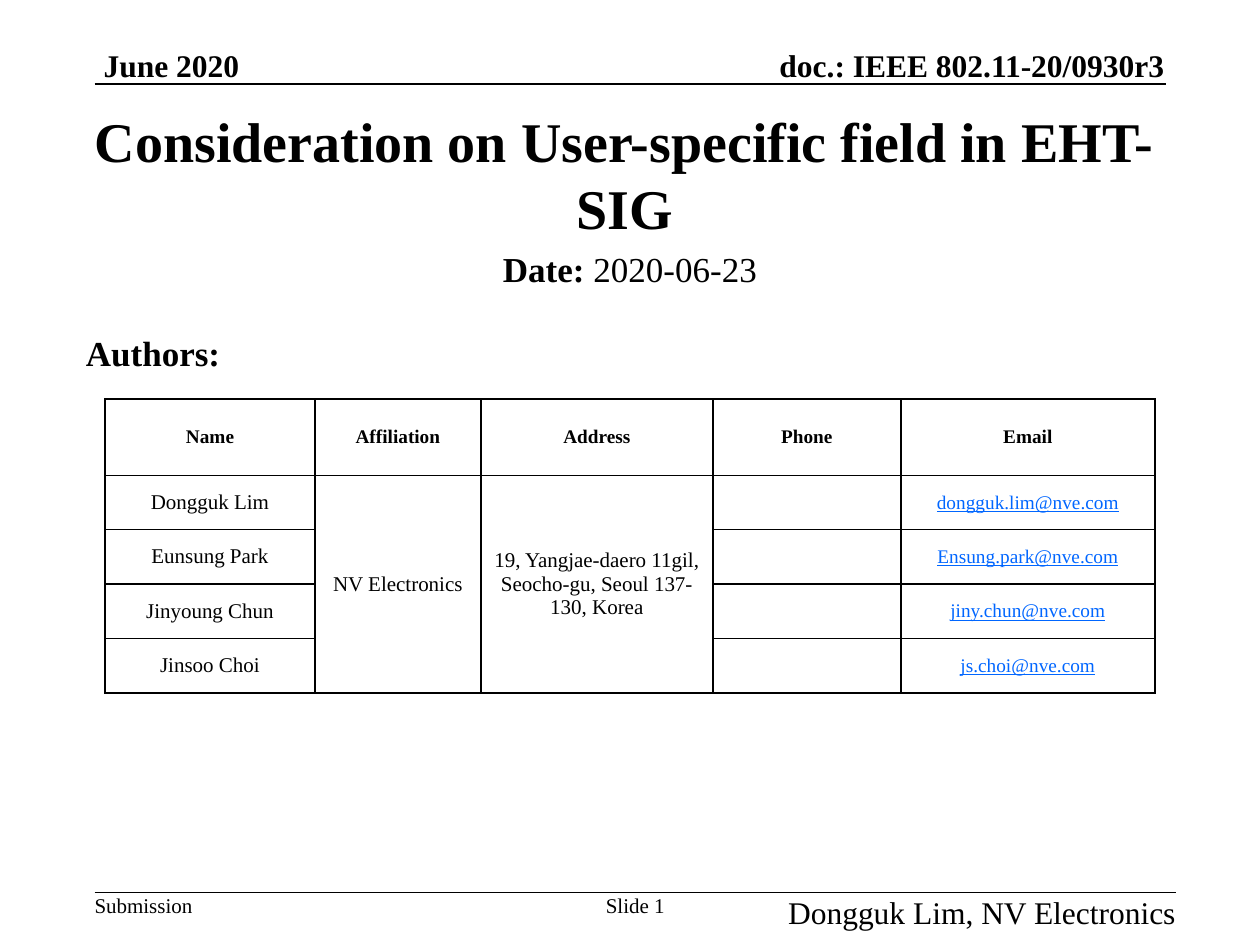
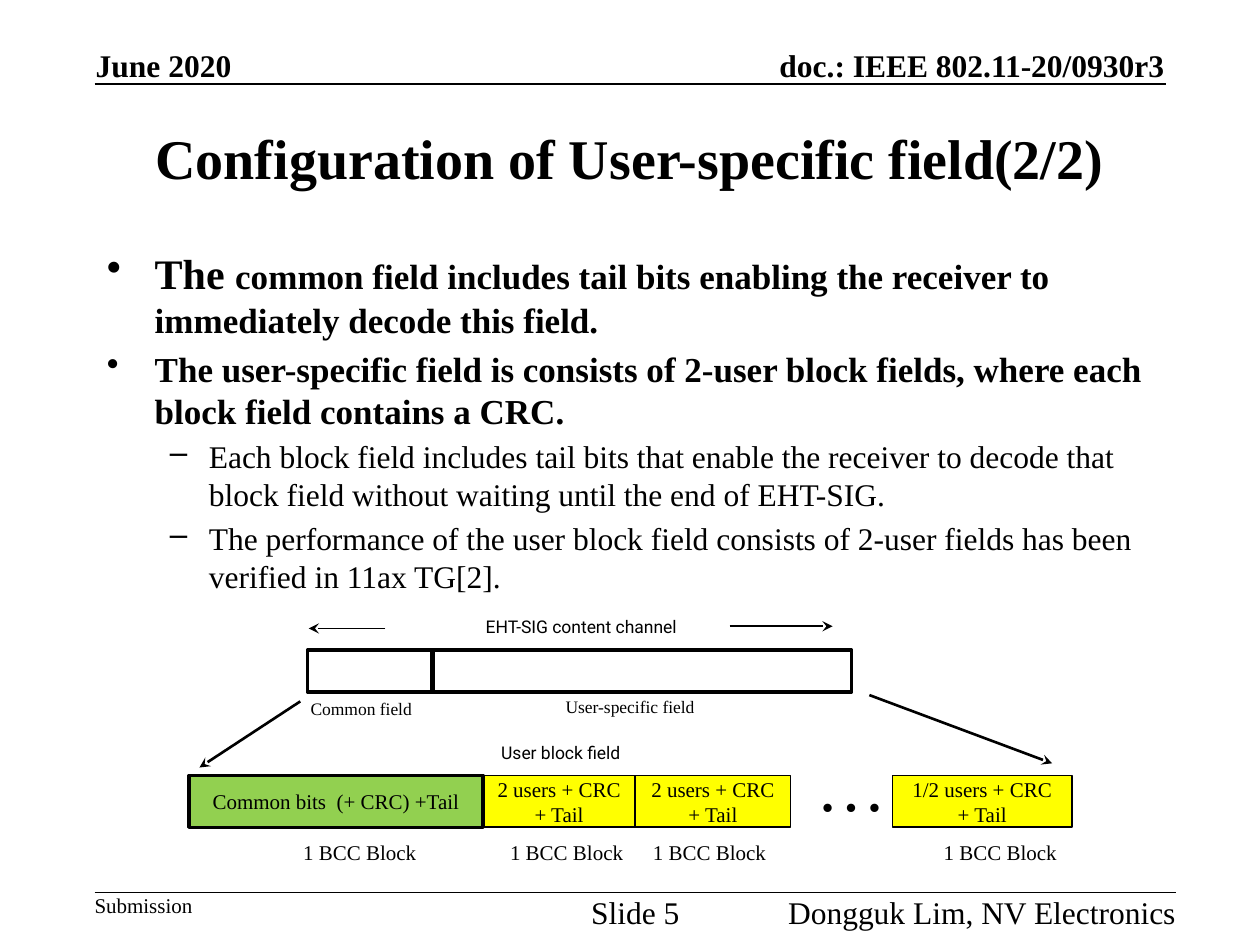
"""Build two slides on the user-specific field of EHT-SIG."""
from collections import namedtuple

from pptx import Presentation
from pptx import util as u
from pptx.dml.color import RGBColor
from pptx.enum import shapes, text
from pptx.oxml import parse_xml
from pptx.oxml.ns import nsdecls

BLACK = RGBColor(0x00, 0x00, 0x00)
LINK = RGBColor(0x00, 0x66, 0xFF)
YELLOW = RGBColor(0xFF, 0xFF, 0x00)
GREEN = RGBColor(0x92, 0xD0, 0x50)
SERIF, SANS = "Times New Roman", "Roboto"
LEFT, CENTER, RIGHT = text.PP_ALIGN.LEFT, text.PP_ALIGN.CENTER, text.PP_ALIGN.RIGHT
TOP, MIDDLE, BOTTOM = text.MSO_ANCHOR.TOP, text.MSO_ANCHOR.MIDDLE, text.MSO_ANCHOR.BOTTOM

WIDTH, HEIGHT = u.Inches(10), u.Inches(7.5)
COLUMNS, ROWS = 120, 90
TEXT_INSETS = (0.1, 0.05)
COMPANY = "NV Electronics"
HEADERS = ("Name", "Affiliation", "Address", "Phone", "Email")
ADDRESS = "19, Yangjae-daero 11gil, Seocho-gu, Seoul 137-130, Korea"
AUTHORS = (
    ("Dongguk Lim", "dongguk.lim@nve.com"),
    ("Eunsung Park", "Ensung.park@nve.com"),
    ("Jinyoung Chun", "jiny.chun@nve.com"),
    ("Jinsoo Choi", "js.choi@nve.com"),
)

Box = namedtuple("Box", "left top width height")


def column(count):
    """Return the length of some grid columns."""
    return int(WIDTH * count / COLUMNS)


def row(count):
    """Return the length of some grid rows."""
    return int(HEIGHT * count / ROWS)


def measure(box):
    """Turn a box in grid units into slide lengths."""
    return column(box.left), row(box.top), column(box.width), row(box.height)


def inside(box, left, top, width, height):
    """Return a box placed relative to the corner of another."""
    return Box(box.left + left, box.top + top, width, height)


def add_run(paragraph, words, size, bold=False, color=BLACK, font=SERIF, underline=None):
    """Add one formatted run to a paragraph."""
    run = paragraph.add_run()
    run.text = words
    run.font.name, run.font.size = font, u.Pt(size)
    run.font.bold, run.font.underline = bold, underline
    run.font.color.rgb = color


def set_frame(frame, anchor, insets=TEXT_INSETS, wrap=True):
    """Set the anchor, insets and wrapping of a text frame."""
    frame.auto_size = text.MSO_AUTO_SIZE.NONE
    frame.word_wrap, frame.vertical_anchor = wrap, anchor
    frame.margin_left = frame.margin_right = u.Inches(insets[0])
    frame.margin_top = frame.margin_bottom = u.Inches(insets[1])


def add_text(slide, box, words, size, align=LEFT, anchor=TOP, insets=TEXT_INSETS,
             wrap=True, bold=False, font=SERIF):
    """Add a text box and return its paragraph."""
    frame = slide.shapes.add_textbox(*measure(box)).text_frame
    set_frame(frame, anchor, insets, wrap)
    paragraph = frame.paragraphs[0]
    paragraph.alignment = align
    add_run(paragraph, words, size, bold, font=font)
    return paragraph


def add_line(slide, start, end, weight=1, arrow=False):
    """Draw a straight line between two grid points, with an arrowhead at its end if asked."""
    line = slide.shapes.add_connector(
        shapes.MSO_CONNECTOR.STRAIGHT,
        column(start[0]), row(start[1]), column(end[0]), row(end[1]))
    line.line.color.rgb, line.line.width = BLACK, u.Pt(weight)
    if arrow:
        head = parse_xml(f'<a:tailEnd {nsdecls("a")} type="stealth"/>')
        line.line._get_or_add_ln().append(head)
    line._element.spPr.append(parse_xml(f'<a:effectLst {nsdecls("a")}/>'))


def add_block(slide, box, words="", fill=None, weight=1):
    """Draw an outlined rectangle with centred text."""
    shape = slide.shapes.add_shape(shapes.MSO_SHAPE.RECTANGLE, *measure(box))
    shape.shadow.inherit = False
    shape.line.color.rgb, shape.line.width = BLACK, u.Pt(weight)
    if fill is None:
        shape.fill.background()
    else:
        shape.fill.solid()
        shape.fill.fore_color.rgb = fill
    set_frame(shape.text_frame, MIDDLE)
    if words:
        paragraph = shape.text_frame.paragraphs[0]
        paragraph.alignment = CENTER
        add_run(paragraph, words, 12)


def add_title(slide, box, words):
    """Place and fill the title placeholder."""
    title = slide.shapes.title
    title.left, title.top, title.width, title.height = measure(box)
    set_frame(title.text_frame, MIDDLE)
    paragraph = title.text_frame.paragraphs[0]
    paragraph.alignment = CENTER
    add_run(paragraph, words, 32, bold=True)


def add_header(slide, box, date):
    """Draw the date, document number and rule above the content."""
    style = dict(size=18, anchor=BOTTOM, insets=(0, 0), wrap=False, bold=True)
    add_text(slide, inside(box, 0.12, 0, 14, box.height), date, **style)
    add_text(slide, inside(box, 58.8, 0, 43.1, box.height),
             "doc.: IEEE 802.11-20/0930r3", align=RIGHT, **style)
    bottom = box.top + box.height
    add_line(slide, (box.left, bottom), (box.left + box.width, bottom))


def add_footer(slide, box, number, number_size):
    """Draw the rule, status, slide number and author below the content."""
    style = dict(insets=(0, 0), wrap=False)
    add_line(slide, (box.left, box.top), (box.left + box.width, box.top))
    add_text(slide, inside(box, 0, 0, 10, box.height), "Submission", 12, **style)
    add_text(slide, inside(box, 46.5, 0, 10, box.height), f"Slide {number}",
             number_size, CENTER, **style)
    add_text(slide, inside(box, 65, 0, 38, box.height), f"Dongguk Lim, {COMPANY}",
             18, RIGHT, **style)


def add_slide(presentation, title, title_box, date, number, number_size):
    """Add a slide with the shared title, header and footer."""
    slide = presentation.slides.add_slide(presentation.slide_layouts[5])
    add_title(slide, title_box, title)
    add_header(slide, Box(9, 4.35, 102, 3.65), date)
    add_footer(slide, Box(9, 85, 103, 3), number, number_size)
    return slide


def format_cell(cell):
    """Give a cell black borders, no fill and tight insets."""
    properties = cell._tc.get_or_add_tcPr()
    for side in ("L", "R", "T", "B"):
        properties.append(parse_xml(
            f'<a:ln{side} {nsdecls("a")} w="{u.Pt(1)}"><a:solidFill>'
            f'<a:srgbClr val="{BLACK}"/></a:solidFill></a:ln{side}>'))
    cell.fill.background()
    cell.vertical_anchor = MIDDLE
    cell.margin_left = cell.margin_right = u.Inches(0.07)
    cell.margin_top = cell.margin_bottom = 0


def add_authors_table(slide, box):
    """Draw the table of authors, merging the cells they share."""
    table = slide.shapes.add_table(len(AUTHORS) + 1, len(HEADERS), *measure(box)).table
    table.first_row = table.horz_banding = False
    for table_column, share in zip(table.columns, (0.2, 0.158, 0.221, 0.179, 0.242)):
        table_column.width = column(box.width * share)
    header_share = 0.26
    for index, table_row in enumerate(table.rows):
        share = (1 - header_share) / len(AUTHORS) if index else header_share
        table_row.height = row(box.height * share)
    for cell in table.iter_cells():
        format_cell(cell)
    for index in (1, 2):
        table.cell(1, index).merge(table.cell(len(AUTHORS), index))

    def fill_cell(row_index, column_index, words, size=12, **style):
        """Write centred text in a cell."""
        paragraph = table.cell(row_index, column_index).text_frame.paragraphs[0]
        paragraph.alignment = CENTER
        add_run(paragraph, words, size, **style)

    for index, words in enumerate(HEADERS):
        fill_cell(0, index, words, 11, bold=True)
    fill_cell(1, 1, COMPANY)
    fill_cell(1, 2, ADDRESS)
    for index, (name, email) in enumerate(AUTHORS, 1):
        fill_cell(index, 0, name)
        fill_cell(index, 4, email, 11, color=LINK, underline=True)


def add_bullets(slide, box, items):
    """Write bulleted paragraphs, each given as a level and its sized runs."""
    frame = slide.shapes.add_textbox(*measure(box)).text_frame
    set_frame(frame, TOP)
    levels = (("•", 0.38, 0.38), ("–", 0.81, 0.31))
    for index, (level, runs) in enumerate(items):
        paragraph = frame.add_paragraph() if index else frame.paragraphs[0]
        paragraph.level = level
        paragraph.space_before = u.Pt(0.2 * runs[0][1])
        mark, margin, hanging = levels[level]
        properties = paragraph._p.get_or_add_pPr()
        properties.set("marL", str(u.Inches(margin)))
        properties.set("indent", str(-u.Inches(hanging)))
        properties.append(parse_xml(f'<a:buChar {nsdecls("a")} char="{mark}"/>'))
        for words, size in runs:
            add_run(paragraph, words, size, bold=level == 0)


def add_channel(slide, box):
    """Draw the content channel with its two fields and extent arrows."""
    add_line(slide, (box.left + 7.4, box.top + 1.85), (box.left + 0.1, box.top + 1.85), arrow=True)
    add_line(slide, (box.left + 40.2, box.top + 1.65), (box.left + 50, box.top + 1.65), arrow=True)
    for left, width in ((0, 12), (11.8, 40)):
        add_block(slide, inside(box, left, 3.9, width, 4), weight=2)
    add_text(slide, inside(box, 13.1, 0.1, 25.9, 3.2), "EHT-SIG content channel",
             10, CENTER, font=SANS)
    add_text(slide, inside(box, -0.9, 7.9, 13.8, 3.2), "Common field", 10)
    add_text(slide, inside(box, 21.4, 7.65, 18.6, 3.2), "User-specific field", 10, CENTER)


def add_coded_blocks(slide, box):
    """Draw the row of coded blocks with their captions."""
    users = "2 users + CRC + Tail"
    blocks = (
        (28, 14.5, users, YELLOW, 1, 29.4),
        (42.5, 14.8, users, YELLOW, 1, 43),
        (67, 17.1, "1/" + users, YELLOW, 1, 70.7),
        (0, 28, "Common bits  (+ CRC) +Tail", GREEN, 2, 9.7),
    )
    add_text(slide, inside(box, 28, 0, 14.8, 3.2), "User block field", 10, CENTER, font=SANS)
    add_text(slide, inside(box, 58.6, -0.1, 10.3, 9.2), "…", 40)
    for left, width, words, fill, weight, caption_left in blocks:
        add_block(slide, inside(box, left, 3.75, width, 4.95), words, fill, weight)
        add_text(slide, inside(box, caption_left, 9.3, 13.7, 3.6), "1 BCC Block", 12, wrap=False)


def add_diagram(slide, box):
    """Draw the channel, its coded blocks and the arrows between them."""
    add_channel(slide, inside(box, 11.3, 0, 51.8, 11))
    add_coded_blocks(slide, inside(box, 0, 12.1, box.width, 13))
    for start, end in (((10.6, 8.8), (1, 15.1)), ((64.8, 8.2), (82.2, 14.7))):
        add_line(slide, (box.left + start[0], box.top + start[1]),
                 (box.left + end[0], box.top + end[1]), 1.5, arrow=True)


def build_cover(presentation):
    """Build the opening slide with its date and authors."""
    slide = add_slide(presentation, "Consideration on User-specific field in EHT-SIG",
                      Box(5, 9, 109, 15), " June 2020", 1, 12)
    date = add_text(slide, Box(9, 23, 102, 5), "Date:", 20, CENTER, bold=True)
    date.space_before = u.Pt(4)
    add_run(date, " 2020-06-23", 20)
    authors = add_text(slide, Box(7, 31, 19, 5), "Authors:", 20, bold=True)
    authors.space_before = u.Pt(4)
    add_authors_table(slide, Box(10, 38, 100, 28))


def build_configuration(presentation):
    """Build the slide on how the user-specific field is laid out."""
    slide = add_slide(presentation, "Configuration of User-specific field(2/2)",
                      Box(9, 9, 102, 12), "June 2020", 5, 18)
    add_bullets(slide, Box(9, 23, 102, 57), (
        (0, (("The ", 24), ("common field includes tail bits enabling the receiver to "
                            "immediately decode this field.", 20))),
        (0, (("The user-specific field is consists of 2-user block fields, where each "
              "block field contains a CRC.", 20),)),
        (1, (("Each block field includes tail bits that enable the receiver to decode that "
              "block field without waiting until the end of EHT-SIG.", 18),)),
        (1, (("The performance of the user block field consists of 2-user fields has been "
              "verified in 11ax TG[2].", 18),)),
    ))
    add_diagram(slide, Box(18, 58, 84.1, 25))


def main():
    """Build and save the presentation."""
    presentation = Presentation()
    presentation.slide_width, presentation.slide_height = WIDTH, HEIGHT
    build_cover(presentation)
    build_configuration(presentation)
    presentation.save("out.pptx")


if __name__ == "__main__":
    main()
